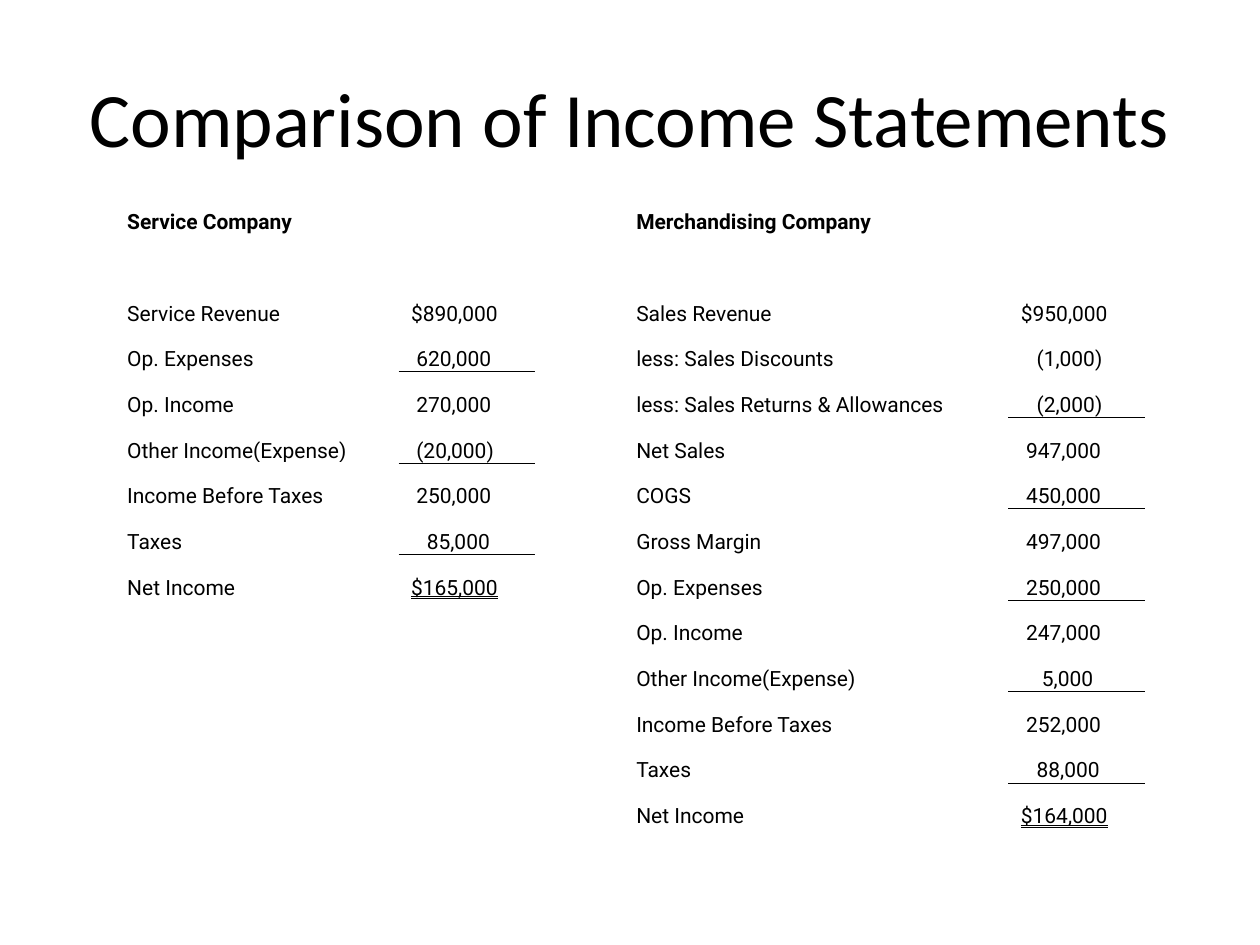
"""Build a slide comparing the income statements of two kinds of company."""
from dataclasses import dataclass

from lxml import etree
from pptx import Presentation
from pptx.dml.color import RGBColor
from pptx.enum.text import MSO_ANCHOR, MSO_UNDERLINE, PP_ALIGN
from pptx.oxml.ns import qn
from pptx.util import Pt

BOTTOM = MSO_ANCHOR.BOTTOM
MIDDLE = MSO_ANCHOR.MIDDLE
CENTER = PP_ALIGN.CENTER
DOUBLE = MSO_UNDERLINE.DOUBLE_LINE

BLACK = "000000"
BLANK_LAYOUT = 6
COLUMN_WIDTHS = (156.2, 77.8, 56.9, 213.8, 77)
ROW_COUNT = 14
ROW_HEIGHT = 26.12
FIRST_ENTRY_ROW = 2
CELL_INSET = 0.72


@dataclass(frozen=True)
class Entry:
    label: str
    amount: str
    indent: float = 9
    ruled: bool = False
    total: bool = False


@dataclass(frozen=True)
class Statement:
    heading: str
    column: int
    entries: tuple[Entry, ...]


STATEMENTS = (
    Statement("Service Company", 0, (
        Entry("Service Revenue", "$890,000", 6),
        Entry("Op. Expenses", "620,000", ruled=True),
        Entry("Op. Income", "270,000"),
        Entry("Other Income(Expense)", "(20,000)", ruled=True),
        Entry("Income Before Taxes", "250,000"),
        Entry("Taxes", "85,000", 15, ruled=True),
        Entry("Net Income", "$165,000", 6, total=True),
    )),
    Statement("Merchandising Company", 3, (
        Entry("Sales Revenue", "$950,000", 6),
        Entry("less: Sales Discounts", "(1,000)", 15),
        Entry("less: Sales Returns & Allowances", "(2,000)", 15, ruled=True),
        Entry("Net Sales", "947,000"),
        Entry("COGS", "450,000", ruled=True),
        Entry("Gross Margin", "497,000"),
        Entry("Op. Expenses", "250,000", ruled=True),
        Entry("Op. Income", "247,000"),
        Entry("Other Income(Expense)", "5,000", 18, ruled=True),
        Entry("Income Before Taxes", "252,000"),
        Entry("Taxes", "88,000", 15, ruled=True),
        Entry("Net Income", "$164,000", 6, total=True),
    )),
)


def color(value: str) -> RGBColor:
    """Turn a hex string into a colour."""
    return RGBColor.from_string(value)


def set_font(paragraph, name: str, size: float) -> None:
    """Set the typeface, size and colour of a paragraph."""
    paragraph.font.name = name
    paragraph.font.size = Pt(size)
    paragraph.font.color.rgb = color(BLACK)


def add_title(slide, text: str) -> None:
    """Add the centred slide title."""
    box = slide.shapes.add_textbox(Pt(36), Pt(21.6), Pt(648), Pt(90))
    frame = box.text_frame
    frame.word_wrap = True
    frame.vertical_anchor = MIDDLE
    paragraph = frame.paragraphs[0]
    paragraph.text = text
    paragraph.alignment = CENTER
    set_font(paragraph, "Calibri", 44)


def add_grid(slide):
    """Add the empty, unfilled table and return it."""
    table = slide.shapes.add_table(
        ROW_COUNT, len(COLUMN_WIDTHS), Pt(72), Pt(108),
        Pt(sum(COLUMN_WIDTHS)), Pt(ROW_COUNT * ROW_HEIGHT)).table
    table.first_row = False
    table.horz_banding = False
    for column, width in zip(table.columns, COLUMN_WIDTHS):
        column.width = Pt(width)
    for row in table.rows:
        row.height = Pt(ROW_HEIGHT)
    for cell in table.iter_cells():
        cell.fill.background()
        cell.vertical_anchor = BOTTOM
        cell.margin_left = cell.margin_right = cell.margin_top = Pt(CELL_INSET)
        cell.margin_bottom = 0
        set_font(cell.text_frame.paragraphs[0], "Roboto", 12)
    return table


def add_border(cell, tag: str) -> None:
    """Draw a thin line along one side of a cell."""
    line = etree.Element(qn(tag), w=str(Pt(0.5)))
    fill = etree.SubElement(line, qn("a:solidFill"))
    etree.SubElement(fill, qn("a:srgbClr"), val=BLACK)
    cell._tc.get_or_add_tcPr().insert(0, line)


def write_cell(cell, text: str, indent: float = 0):
    """Write text into a cell and return its paragraph."""
    paragraph = cell.text_frame.paragraphs[0]
    paragraph.text = text
    if indent:
        paragraph._p.get_or_add_pPr().set("marL", str(Pt(indent)))
    return paragraph


def fill_statement(table, statement: Statement) -> None:
    """Write one income statement into its pair of columns."""
    label_column, amount_column = statement.column, statement.column + 1
    write_cell(table.cell(0, label_column), statement.heading).font.bold = True
    for row, entry in enumerate(statement.entries, FIRST_ENTRY_ROW):
        write_cell(table.cell(row, label_column), entry.label)
        amount_cell = table.cell(row, amount_column)
        amount = write_cell(amount_cell, entry.amount, entry.indent)
        if entry.total:
            amount.font.underline = DOUBLE
        if entry.ruled:
            add_border(amount_cell, "a:lnB")
            add_border(table.cell(row + 1, amount_column), "a:lnT")


def main() -> None:
    """Build and save the slide."""
    presentation = Presentation()
    presentation.slide_width = Pt(720)
    presentation.slide_height = Pt(540)
    slide = presentation.slides.add_slide(
        presentation.slide_layouts[BLANK_LAYOUT])
    add_title(slide, "Comparison of Income Statements")
    table = add_grid(slide)
    for statement in STATEMENTS:
        fill_statement(table, statement)
    presentation.save("out.pptx")


if __name__ == "__main__":
    main()
